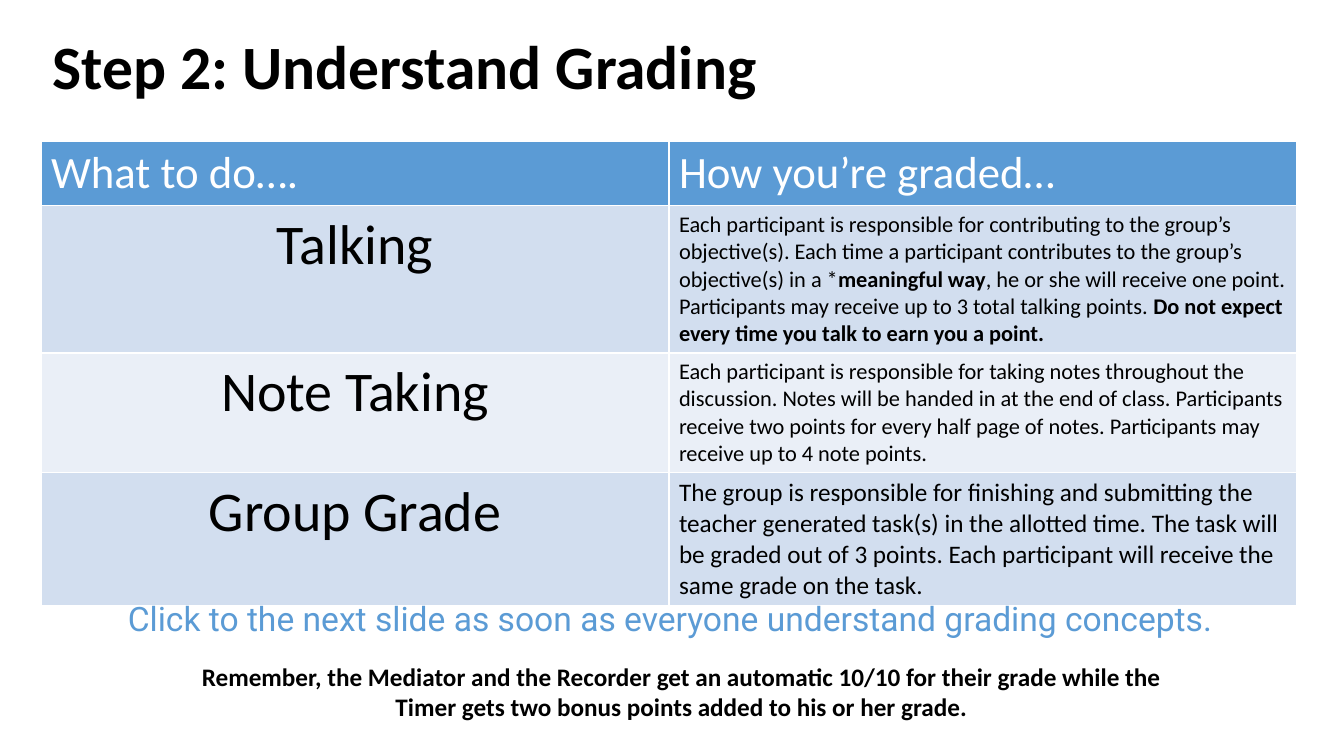
from lxml import etree
from pptx import Presentation, util as u
from pptx.dml.color import RGBColor
from pptx.enum import text as t
from pptx.oxml import ns

COLORS = {"ink": "000000", "white": "FFFFFF", "blue": "5B9BD5",
          "band": "D2DEEF", "pale": "EAEFF7"}
LEFT, CENTER = t.PP_ALIGN.LEFT, t.PP_ALIGN.CENTER
TOP, MIDDLE = t.MSO_ANCHOR.TOP, t.MSO_ANCHOR.MIDDLE

# Each text is a list of (words, bold) spans.
HEADINGS = ["What to do….", "How you’re graded…"]
CRITERIA = [
    ("Talking", 16, [
        ("Each participant is responsible for contributing to the group’s objective(s). "
         "Each time a participant contributes to the group’s objective(s) in a *", False),
        ("meaningful way", True),
        (", he or she will receive one point. Participants may receive up to 3 total "
         "talking points. ", False),
        ("Do not expect every time you talk to earn you a point.", True)]),
    ("Note Taking", 16, [
        ("Each participant is responsible for taking notes throughout the discussion. "
         "Notes will be handed in at the end of class. Participants receive two points "
         "for every half page of notes. Participants may receive up to 4 note points.", False)]),
    ("Group Grade", 18, [
        ("The group is responsible for finishing and submitting the teacher generated "
         "task(s) in the allotted time. The task will be graded out of 3 points. Each "
         "participant will receive the same grade on the task.", False)]),
]
TABLE_BOX = (41, 141, 1256, 464)
ROW_HEIGHTS = [64, 147, 120, 133]

# Box in px, spans, size, font, colour, alignment, anchor, line spacing
TEXTS = [
    ((43, 0, 1257, 140), [("Step 2: Understand Grading", True)],
     44, "Calibri", "ink", LEFT, MIDDLE, 0.9),
    ((163, 656, 1037, 72),
     [("Remember, the Mediator and the Recorder get an automatic 10/10 for their grade "
       "while the Timer gets two bonus points added to his or her grade.", True)],
     18, "Calibri", "ink", CENTER, TOP, 1.0),
    ((43, 593, 1254, 82),
     [("Click to the next slide as soon as everyone understand grading concepts.", False)],
     24, "Roboto", "blue", CENTER, TOP, 1.0),
]


def px(length):
    return u.Emu(round(length * 914400 / 100.8))


def rgb(name):
    return RGBColor.from_string(COLORS[name])


def write(frame, spans, size, font, color, align, spacing=1.0):
    para = frame.paragraphs[0]
    para.alignment = align
    para.line_spacing = spacing
    for words, bold in spans:
        span = para.add_run()
        span.text = words
        span.font.color.rgb = rgb(color)
        for name, value in {"size": u.Pt(size), "name": font, "bold": bold}.items():
            setattr(span.font, name, value)


def outline(cell):
    """Give the cell a thin white border; lines must precede the fill."""
    props = cell._tc.get_or_add_tcPr()
    for index, side in enumerate(("lnL", "lnR", "lnT", "lnB")):
        line = etree.Element(ns.qn("a:" + side), w=str(u.Pt(1)))
        fill = etree.SubElement(line, ns.qn("a:solidFill"))
        etree.SubElement(fill, ns.qn("a:srgbClr"), val=COLORS["white"])
        props.insert(index, line)


def add_grading_table(page):
    rows = [[([(heading, False)], 32, "white", LEFT) for heading in HEADINGS]]
    for task, size, rule in CRITERIA:
        rows.append([([(task, False)], 40, "ink", CENTER), (rule, size, "ink", LEFT)])
    table = page.shapes.add_table(len(rows), len(HEADINGS), *map(px, TABLE_BOX)).table
    for column in table.columns:
        column.width = px(TABLE_BOX[2] / len(HEADINGS))
    for r, cells in enumerate(rows):
        table.rows[r].height = px(ROW_HEIGHTS[r])
        fill = "blue" if r == 0 else "band" if r % 2 else "pale"
        for c, (spans, size, color, align) in enumerate(cells):
            cell = table.cell(r, c)
            cell.fill.solid()
            cell.fill.fore_color.rgb = rgb(fill)
            outline(cell)
            write(cell.text_frame, spans, size, "Calibri", color, align)


def main():
    deck = Presentation()
    deck.slide_width, deck.slide_height = px(1344), px(756)
    page = deck.slides.add_slide(deck.slide_layouts[6])
    add_grading_table(page)
    for box, spans, size, font, color, align, anchor, spacing in TEXTS:
        frame = page.shapes.add_textbox(*map(px, box)).text_frame
        frame.word_wrap = True
        frame.vertical_anchor = anchor
        write(frame, spans, size, font, color, align, spacing)
    deck.save("out.pptx")


if __name__ == "__main__":
    main()
